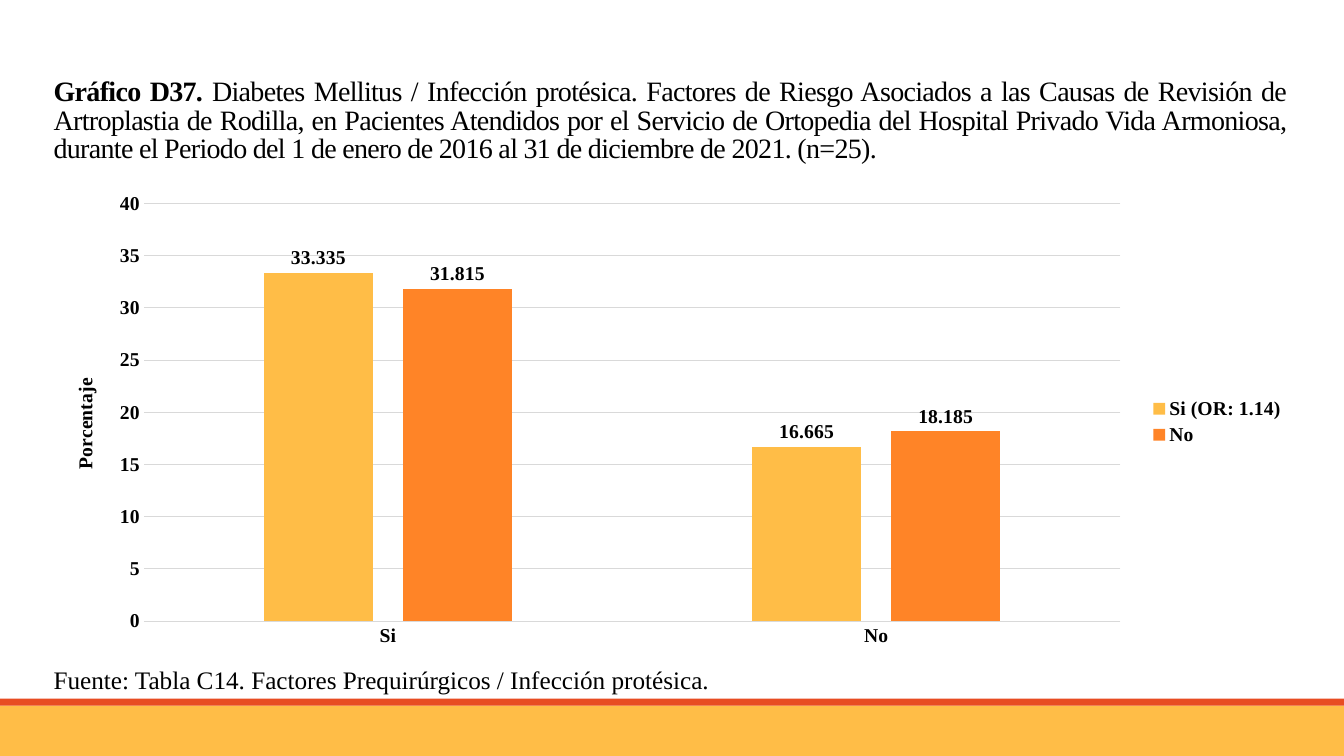
import pptx
import pptx.util
import pptx.chart.data
import pptx.dml.color
import pptx.enum.chart
import pptx.enum.shapes
import pptx.enum.text
import pptx.oxml
import pptx.oxml.ns

RGB = pptx.dml.color.RGBColor
AMBER = RGB(0xFF, 0xBD, 0x47)
ORANGE = RGB(0xFF, 0x84, 0x27)
RED = RGB(0xE8, 0x4C, 0x22)
GRAY = RGB(0xD9, 0xD9, 0xD9)
BLACK = RGB(0, 0, 0)
FONT = "Times New Roman"
WIDE = pptx.util.Inches(13.33)
HIGH = pptx.util.Inches(7.5)
LEFT = 0.0325
SPAN = 0.9315
HEAD = (
    ("Gráfico D37. ", True),
    ("Diabetes Mellitus / Infección protésica. Factores de Riesgo Asociados "
     "a las Causas de Revisión de Artroplastia de Rodilla, en Pacientes "
     "Atendidos por el Servicio de Ortopedia del Hospital Privado Vida "
     "Armoniosa, durante el Periodo del 1 de enero de 2016 al 31 de "
     "diciembre de 2021. (n=25).", False),
)
FOOT = (("Fuente: Tabla C14. Factores Prequirúrgicos / Infección protésica.",
         False),)
CATS = ("Si", "No")
ROWS = (
    ("Si (OR: 1.14)", (33.335, 16.665), AMBER),
    ("No", (31.815, 18.185), ORANGE),
)


def place(left, top, width, height):
    return (round(left * WIDE), round(top * HIGH),
            round(width * WIDE), round(height * HIGH))


def style(font, size, bold):
    font.name = FONT
    font.size = pptx.util.Pt(size)
    font.bold = bold
    font.color.rgb = BLACK


def add_band(slide, top, height, color):
    kind = pptx.enum.shapes.MSO_SHAPE.RECTANGLE
    band = slide.shapes.add_shape(kind, *place(0, top, 1, height))
    band.shadow.inherit = False
    band.fill.solid()
    band.fill.fore_color.rgb = color
    band.line.fill.background()


def add_text(slide, box, parts, size, space=0):
    frame = slide.shapes.add_textbox(*place(*box)).text_frame
    frame.word_wrap = True
    para = frame.paragraphs[0]
    for text, bold in parts:
        run = para.add_run()
        run.text = text
        style(run.font, size, bold)
        if space:
            run.font._element.set("spc", str(space))
    return frame


def layout(parent, index, **spots):
    for old in parent.findall(pptx.oxml.ns.qn("c:layout")):
        parent.remove(old)
    inner = '<c:layoutTarget val="inner"/>' if "w" in spots else ""
    modes = "".join(f'<c:{key}Mode val="edge"/>' for key in "xy")
    sizes = "".join(f'<c:{key} val="{val}"/>' for key, val in spots.items())
    space = pptx.oxml.ns.nsdecls("c")
    parent.insert(index, pptx.oxml.parse_xml(
        f"<c:layout {space}><c:manualLayout>{inner}{modes}{sizes}"
        "</c:manualLayout></c:layout>"))


def style_axes(chart):
    none = pptx.enum.chart.XL_TICK_MARK.NONE
    for axis in (chart.category_axis, chart.value_axis):
        axis.major_tick_mark = none
        axis.minor_tick_mark = none
        style(axis.tick_labels.font, 14, True)
    grid = chart.value_axis.major_gridlines.format.line
    for line in (chart.category_axis.format.line, grid):
        line.color.rgb = GRAY
        line.width = pptx.util.Pt(0.75)
    axis = chart.value_axis
    axis.format.line.fill.background()
    axis.minimum_scale, axis.maximum_scale, axis.major_unit = 0, 40, 5
    title = axis.axis_title
    run = title.text_frame.paragraphs[0].add_run()
    run.text = "Porcentaje"
    style(run.font, 14, True)
    body = title._element.find(".//" + pptx.oxml.ns.qn("a:bodyPr"))
    body.set("rot", "-5400000")
    body.set("vert", "horz")
    layout(title._element, 1, x=0.02, y=0.4)


def add_bars(slide, box):
    data = pptx.chart.data.CategoryChartData()
    data.categories = CATS
    for name, vals, color in ROWS:
        data.add_series(name, vals)
    kind = pptx.enum.chart.XL_CHART_TYPE.COLUMN_CLUSTERED
    chart = slide.shapes.add_chart(kind, *place(*box), data).chart
    chart.has_title = False
    style(chart.font, 14, True)
    plot = chart.plots[0]
    plot.gap_width, plot.overlap = 219, -27
    plot.vary_by_categories = False
    for bars, (name, vals, color) in zip(plot.series, ROWS):
        bars.format.fill.solid()
        bars.format.fill.fore_color.rgb = color
        tags = bars.data_labels
        tags.show_value = True
        tags.position = pptx.enum.chart.XL_LABEL_POSITION.OUTSIDE_END
        style(tags.font, 14, True)
    style_axes(chart)
    chart.has_legend = True
    chart.legend.position = pptx.enum.chart.XL_LEGEND_POSITION.RIGHT
    chart.legend.include_in_layout = False
    style(chart.legend.font, 14, True)
    area = chart._chartSpace.find(".//" + pptx.oxml.ns.qn("c:plotArea"))
    layout(area, 0, x=0.08, y=0.04, w=0.78, h=0.88)


def main():
    deck = pptx.Presentation()
    deck.slide_width, deck.slide_height = WIDE, HIGH
    slide = deck.slides.add_slide(deck.slide_layouts[6])
    add_band(slide, 0.9333, 0.0667, AMBER)
    add_band(slide, 0.924, 0.0093, RED)
    head = add_text(slide, (LEFT, 0.055, SPAN, 0.212), HEAD, 20, -50)
    head.vertical_anchor = pptx.enum.text.MSO_ANCHOR.MIDDLE
    head.paragraphs[0].alignment = pptx.enum.text.PP_ALIGN.JUSTIFY
    head.paragraphs[0].line_spacing = 0.85
    add_bars(slide, (LEFT, 0.244, SPAN, 0.628))
    add_text(slide, (LEFT, 0.872, 0.592, 0.053), FOOT, 18)
    deck.save("out.pptx")


if __name__ == "__main__":
    main()
